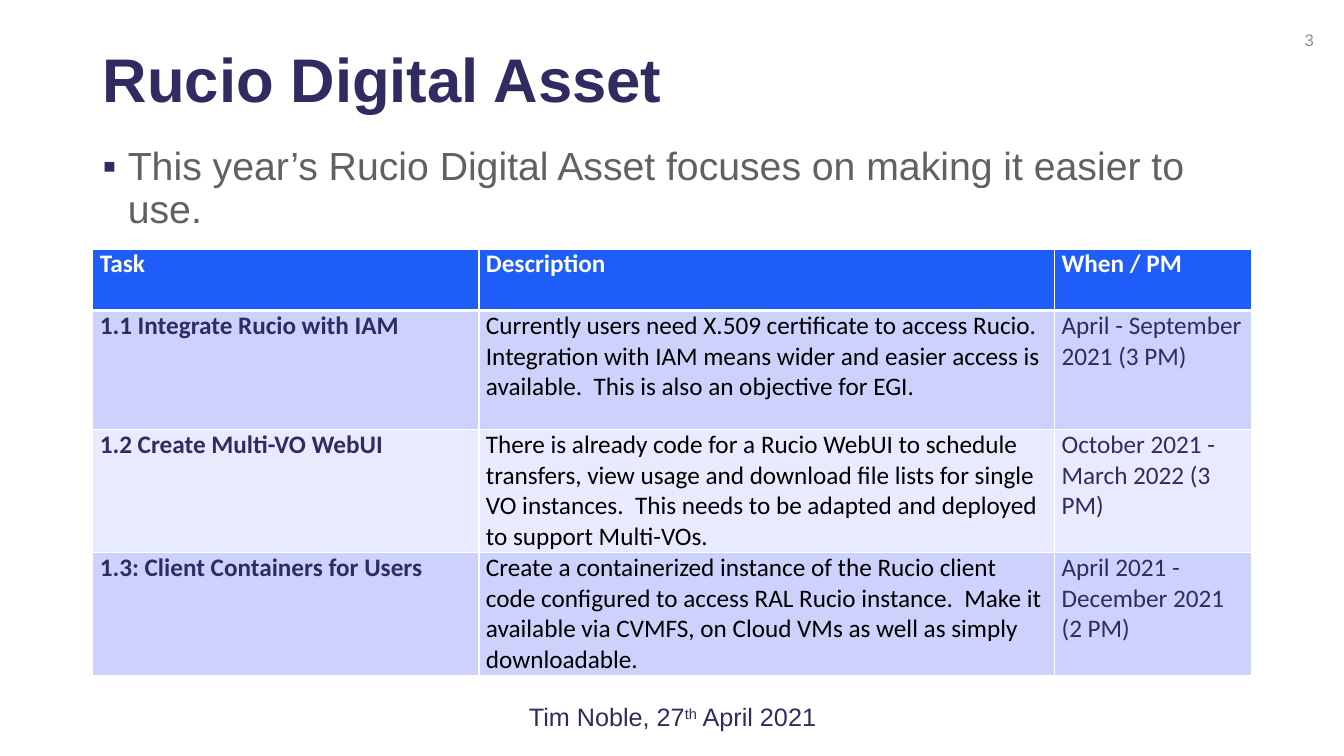
from dataclasses import dataclass

from lxml.etree import SubElement
from pptx import Presentation
from pptx.dml.color import RGBColor
from pptx.enum.text import MSO_ANCHOR as Anchor, PP_ALIGN as Align
from pptx.oxml.ns import qn
from pptx.util import Emu, Pt

PX = 9144  # 100 px to the inch
COLORS = {
    "navy": "2E2C61", "grey": "616161", "pale": "8F8F9E", "black": "000000",
    "white": "FFFFFF", "header": "1E5DF8", "band_dark": "CDD2FC", "band_light": "E8EAFE",
}


@dataclass
class Label:
    left: int
    top: int
    width: int
    height: int
    spans: list[str]
    size: int
    color: str
    align: Align = Align.LEFT
    anchor: Anchor = Anchor.TOP
    bold: bool = False
    line_spacing: float = 1.0
    bullet: str = ""


@dataclass
class Row:
    height: int
    fill: str
    texts: tuple[str, str, str]


LABELS = [
    Label(92, 24, 1150, 116, ["Rucio Digital Asset"], 44, "navy",
          anchor=Anchor.MIDDLE, bold=True, line_spacing=0.9),
    Label(1262, 20, 51, 40, ["3"], 12, "pale", Align.RIGHT, Anchor.MIDDLE),
    Label(92, 141, 1150, 94,
          ["This year’s Rucio Digital Asset focuses on making it easier to use."],
          28, "grey", line_spacing=0.9, bullet="▪"),
    Label(442, 691, 450, 40, ["Tim Noble, 27", "th", " April 2021"], 18, "navy", Align.CENTER),
]
SUPERSCRIPT = "th"

COLUMN_WIDTHS = (383, 571, 195)
COLUMN_COLORS = ("navy", "black", "navy")
ROWS = [
    Row(61, "header", ("Task", "Description", "When / PM")),
    Row(118, "band_dark", (
        "1.1 Integrate Rucio with IAM",
        "Currently users need X.509 certificate to access Rucio.  Integration with IAM means "
        "wider and easier access is available.  This is also an objective for EGI.",
        "April - September 2021 (3 PM)")),
    Row(122, "band_light", (
        "1.2 Create Multi-VO WebUI",
        "There is already code for a Rucio WebUI to schedule transfers, view usage and download "
        "file lists for single VO instances.  This needs to be adapted and deployed to support "
        "Multi-VOs.",
        "October 2021 - March 2022 (3 PM)")),
    Row(122, "band_dark", (
        "1.3: Client Containers for Users",
        "Create a containerized instance of the Rucio client code configured to access RAL Rucio "
        "instance.  Make it available via CVMFS, on Cloud VMs as well as simply downloadable.",
        "April 2021 - December 2021 (2 PM)")),
]


def px(length: int) -> Emu:
    return Emu(length * PX)


def rgb(name: str) -> RGBColor:
    return RGBColor.from_string(COLORS[name])


def style_font(para, name: str, size: int, color: str, bold: bool) -> None:
    font = para.font
    font.name, font.size, font.bold = name, Pt(size), bold
    font.color.rgb = rgb(color)


def add_bullet(para, symbol: str, color: str) -> None:
    props = para._p.get_or_add_pPr()
    props.set("marL", str(px(25)))
    props.set("indent", str(-px(25)))
    SubElement(SubElement(props, qn("a:buClr")), qn("a:srgbClr"), val=COLORS[color])
    SubElement(props, qn("a:buFont"), typeface="Arial")
    SubElement(props, qn("a:buChar"), char=symbol)


def add_label(page, label: Label) -> None:
    box = page.shapes.add_textbox(px(label.left), px(label.top), px(label.width), px(label.height))
    frame = box.text_frame
    frame.word_wrap = True
    frame.vertical_anchor = label.anchor
    para = frame.paragraphs[0]
    para.alignment = label.align
    para.line_spacing = label.line_spacing
    if label.bullet:
        add_bullet(para, label.bullet, "navy")
    style_font(para, "Arial", label.size, label.color, label.bold)
    for text in label.spans:
        span = para.add_run()
        span.text = text
        if text == SUPERSCRIPT:
            span._r.get_or_add_rPr().set("baseline", "30000")


def add_borders(cell, top: int, bottom: int) -> None:
    props = cell._tc.get_or_add_tcPr()
    for side, width in (("L", 1), ("R", 1), ("T", top), ("B", bottom)):
        line = SubElement(props, qn(f"a:ln{side}"), w=str(Pt(width)))
        SubElement(SubElement(line, qn("a:solidFill")), qn("a:srgbClr"), val=COLORS["white"])


def add_task_table(page, left: int, top: int) -> None:
    width, height = sum(COLUMN_WIDTHS), sum(row.height for row in ROWS)
    table = page.shapes.add_table(
        len(ROWS), len(COLUMN_WIDTHS), px(left), px(top), px(width), px(height)).table
    for column, column_width in zip(table.columns, COLUMN_WIDTHS):
        column.width = px(column_width)
    for row_index, row in enumerate(ROWS):
        table.rows[row_index].height = px(row.height)
        is_header = row_index == 0
        for column_index, text in enumerate(row.texts):
            cell = table.cell(row_index, column_index)
            cell.margin_left = cell.margin_right = px(7)
            cell.margin_top = cell.margin_bottom = 0
            add_borders(cell, 3 if row_index == 1 else 1, 3 if is_header else 1)
            cell.fill.solid()
            cell.fill.fore_color.rgb = rgb(row.fill)
            cell.text = text
            color = "white" if is_header else COLUMN_COLORS[column_index]
            style_font(cell.text_frame.paragraphs[0], "Calibri", 18, color,
                       is_header or column_index == 0)


def main() -> None:
    deck = Presentation()
    deck.slide_width, deck.slide_height = px(1333), px(750)
    page = deck.slides.add_slide(deck.slide_layouts[6])
    # Task table
    add_task_table(page, 92, 247)
    # Title, page number, bullet and footer
    for label in LABELS:
        add_label(page, label)
    deck.save("out.pptx")


if __name__ == "__main__":
    main()
